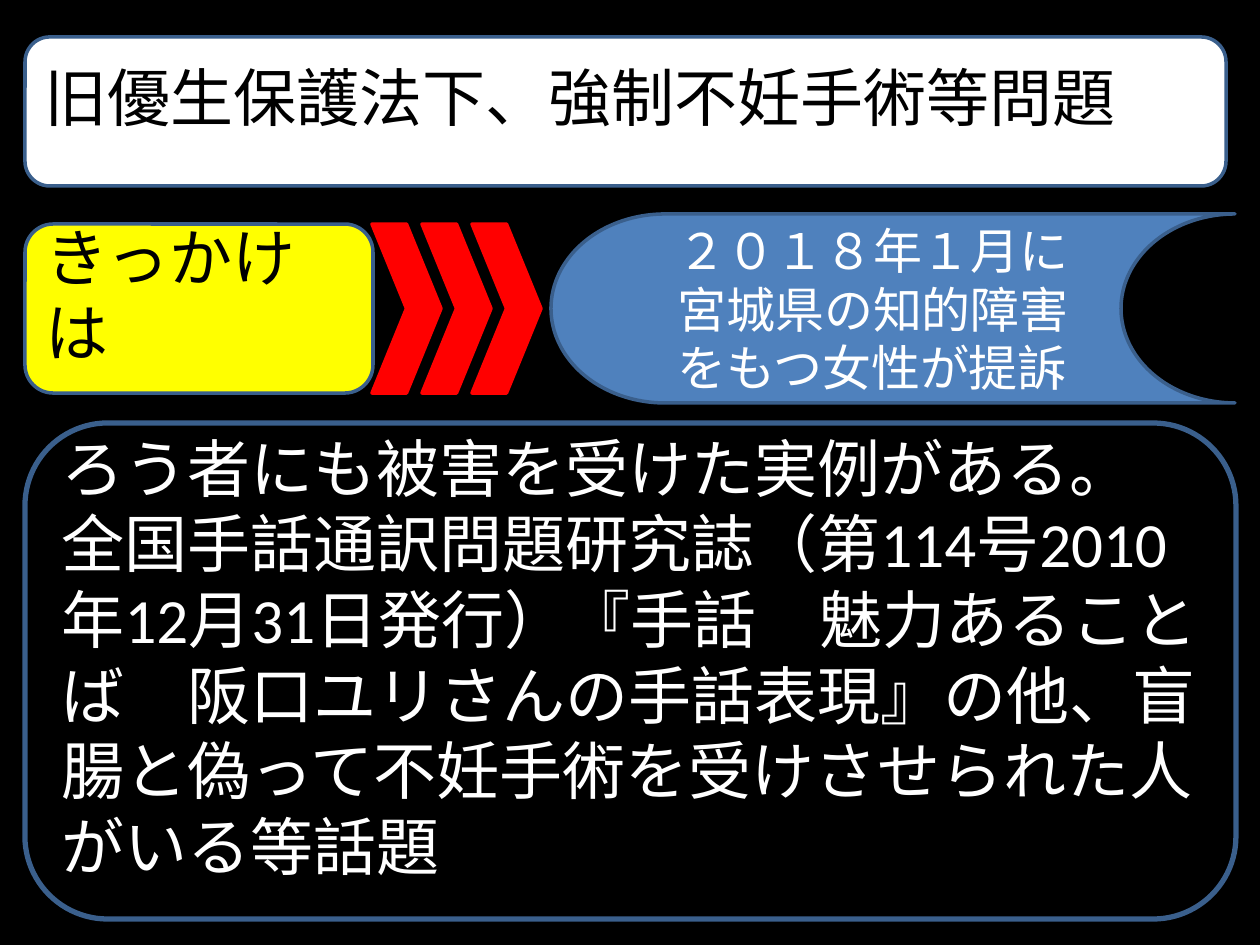
from pptx import Presentation
from pptx.dml.color import RGBColor
from pptx.enum.shapes import MSO_SHAPE as Shape
from pptx.enum.text import MSO_ANCHOR as Anchor, PP_ALIGN as Align
from pptx.util import Pt

EMU_PER_PX = 914400 / 126
COLORS = {"black": "000000", "white": "FFFFFF", "yellow": "FFFF00",
          "red": "FF0000", "blue": "4F81BD", "outline": "3A5F8C"}


def px(n):
    return round(n * EMU_PER_PX)


def rgb(name):
    return RGBColor.from_string(COLORS[name])


class Deck:
    font = "Calibri"

    def __init__(self, width, height):
        self.prs = Presentation()
        self.prs.slide_width, self.prs.slide_height = px(width), px(height)

    def slide(self, color):
        self.s = self.prs.slides.add_slide(self.prs.slide_layouts[6])
        fill = self.s.background.fill
        fill.solid()
        fill.fore_color.rgb = rgb(color)

    def shape(self, kind, box, fill, line="outline", weight=2):
        sp = self.s.shapes.add_shape(kind, *map(px, box))
        sp.shadow.inherit = False
        sp.fill.solid()
        sp.fill.fore_color.rgb = rgb(fill)
        sp.line.color.rgb = rgb(line)
        sp.line.width = Pt(weight)
        return sp

    def text(self, sp, text, color, size=36, bottom=6):
        tf = sp.text_frame
        tf.word_wrap = True
        tf.vertical_anchor = Anchor.MIDDLE
        tf.margin_bottom = px(bottom)
        tf.text = text
        for p in tf.paragraphs:
            p.alignment = Align.LEFT
            for r in p.runs:
                r.font.name = self.font
                r.font.size = Pt(size)
                r.font.color.rgb = rgb(color)

    def panel(self, box, text, fill, color, weight=2):
        sp = self.shape(Shape.ROUNDED_RECTANGLE, box, fill, weight=weight)
        self.text(sp, text, color, bottom=36)

    def chevrons(self, box, count, step):
        x, *rest = box
        for i in range(count):
            self.shape(Shape.CHEVRON, (x + i * step, *rest), "red", "red")


def main():
    deck = Deck(1260, 945)
    deck.slide("black")

    # Title
    deck.panel((25, 37, 1201, 149), "旧優生保護法下、強制不妊手術等問題", "white", "black")

    # Trigger
    deck.panel((25, 224, 348, 169), "きっかけは", "yellow", "black")

    # Details
    deck.panel((25, 423, 1211, 496),
               "ろう者にも被害を受けた実例がある。\n"
               "全国手話通訳問題研究誌（第114号2010年12月31日発行）"
               "『手話　魅力あることば　阪口ユリさんの手話表現』"
               "の他、盲腸と偽って不妊手術を受けさせられた人がいる等話題",
               "black", "white", weight=3)

    # Arrows leading to the lawsuit
    deck.chevrons((372, 224, 69, 169), count=3, step=50)

    # Lawsuit
    sp = deck.shape(Shape.FLOWCHART_STORED_DATA, (551, 214, 684, 189), "blue")
    deck.text(sp, "２０１８年１月に宮城県の知的障害をもつ女性が提訴", "white", size=28)

    deck.prs.save("out.pptx")


if __name__ == "__main__":
    main()
